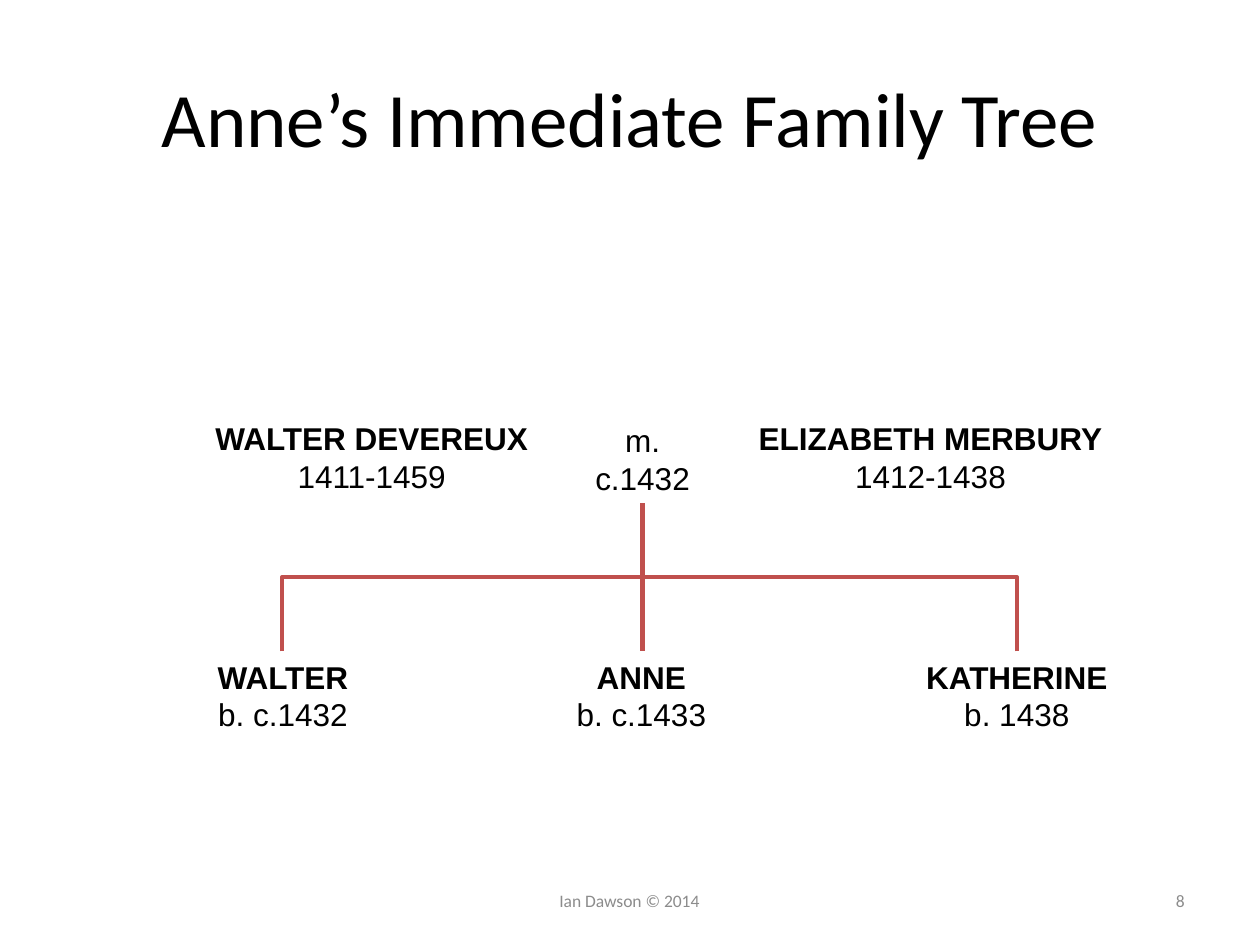
"""Build the slide showing Anne's immediate family tree."""
from dataclasses import dataclass

import pptx
import pptx.dml.color
import pptx.enum.shapes
import pptx.enum.text
import pptx.oxml
import pptx.oxml.ns
import pptx.shapes.connector
import pptx.slide
import pptx.text.text
import pptx.util

Inches = pptx.util.Inches
Align = pptx.enum.text.PP_ALIGN
Anchor = pptx.enum.text.MSO_ANCHOR
Connector = pptx.enum.shapes.MSO_CONNECTOR


@dataclass(frozen=True)
class Theme:
    """Fonts, colours and sizes of the slide."""
    heading_font: str = "Calibri"
    tree_font: str = "Arial"
    ink: str = "000000"
    footer_ink: str = "8C8C8C"
    branch: str = "C0504D"
    title_size: float = 44
    tree_size: float = 18
    footer_size: float = 10
    branch_width: float = 2.5


@dataclass(frozen=True)
class Entry:
    """Two centred lines of the tree."""
    heading: str
    dates: str
    left: float
    top: float
    width: float
    bold: bool = True


@dataclass(frozen=True)
class Footer:
    """A line of text at the foot of the slide."""
    text: str
    left: float
    width: float
    align: Align


THEME = Theme()
PARENT_TOP, CHILD_TOP, ENTRY_HEIGHT = 3.28, 5.17, 0.71
MARRIAGE_X, MARRIAGE_BOTTOM = 5.1, 3.99
SIBLING_Y = (MARRIAGE_BOTTOM + CHILD_TOP) / 2
WALTER_X, KATHERINE_X = 2.24, 8.07
FOOTER_TOP, FOOTER_HEIGHT = 6.95, 0.4

ENTRIES = [
    Entry("WALTER DEVEREUX", "1411-1459", 1.61, PARENT_TOP, 2.68),
    Entry("ELIZABETH MERBURY", "1412-1438", 5.91, PARENT_TOP, 2.95),
    Entry("m.", "c.1432", 4.62, PARENT_TOP + 0.01, 0.96, bold=False),
    Entry("KATHERINE", "b. 1438", 7.24, CHILD_TOP, 1.66),
    Entry("WALTER", "b. c.1432", 1.62, CHILD_TOP, 1.25),
    Entry("ANNE", "b. c.1433", 4.47, CHILD_TOP, 1.24),
]
FOOTERS = [
    Footer("Ian Dawson © 2014", 2.74, 4.51, Align.CENTER),
    Footer("8", 7.17, 2.33, Align.RIGHT),
]


def style(paragraph: pptx.text.text._Paragraph, font: str, size: float,
          color: str, align: Align, bold: bool = False) -> None:
    """Format a paragraph and its runs."""
    paragraph.alignment = align
    for run in paragraph.runs:
        run.font.name = font
        run.font.size = pptx.util.Pt(size)
        run.font.bold = bold
        run.font.color.rgb = pptx.dml.color.RGBColor.from_string(color)


def add_title(slide: pptx.slide.Slide, text: str) -> None:
    """Place and format the title."""
    title = slide.shapes.title
    title.left, title.top = Inches(0.12), Inches(0.3)
    title.width, title.height = Inches(9.76), Inches(1.25)
    title.text_frame.text = text
    title.text_frame.vertical_anchor = Anchor.MIDDLE
    style(title.text_frame.paragraphs[0], THEME.heading_font,
          THEME.title_size, THEME.ink, Align.CENTER)


def add_entry(slide: pptx.slide.Slide, entry: Entry) -> None:
    """Write one entry of the tree."""
    frame = slide.shapes.add_textbox(
        Inches(entry.left), Inches(entry.top),
        Inches(entry.width), Inches(ENTRY_HEIGHT)).text_frame
    frame.word_wrap = False
    frame.auto_size = pptx.enum.text.MSO_AUTO_SIZE.SHAPE_TO_FIT_TEXT
    frame.text = f"{entry.heading}\n{entry.dates}"
    for paragraph, bold in zip(frame.paragraphs, (entry.bold, False)):
        style(paragraph, THEME.tree_font, THEME.tree_size, THEME.ink,
              Align.CENTER, bold)


def add_footer(slide: pptx.slide.Slide, footer: Footer) -> None:
    """Write one footer text."""
    frame = slide.shapes.add_textbox(
        Inches(footer.left), Inches(FOOTER_TOP),
        Inches(footer.width), Inches(FOOTER_HEIGHT)).text_frame
    frame.word_wrap = True
    frame.vertical_anchor = Anchor.MIDDLE
    frame.text = footer.text
    style(frame.paragraphs[0], THEME.heading_font, THEME.footer_size,
          THEME.footer_ink, footer.align)


def add_line(slide: pptx.slide.Slide, kind: Connector, x1: float, y1: float,
             x2: float, y2: float) -> pptx.shapes.connector.Connector:
    """Draw a flat connector in the branch colour."""
    line = slide.shapes.add_connector(
        kind, Inches(x1), Inches(y1), Inches(x2), Inches(y2))
    line.line.color.rgb = pptx.dml.color.RGBColor.from_string(THEME.branch)
    line.line.width = pptx.util.Pt(THEME.branch_width)
    line._element.spPr.append(pptx.oxml.parse_xml(
        f"<a:effectLst {pptx.oxml.ns.nsdecls('a')}/>"))
    return line


def add_branch(slide: pptx.slide.Slide, child_x: float, end_y: float,
               preset: str) -> None:
    """Draw an elbow that leaves a child upwards and ends under the marriage."""
    side = 1 if child_x < MARRIAGE_X else -1
    center_x, center_y = (child_x + MARRIAGE_X) / 2, (CHILD_TOP + end_y) / 2
    half_rise = side * (CHILD_TOP - end_y) / 2
    half_span = abs(MARRIAGE_X - child_x) / 2
    elbow = add_line(slide, Connector.ELBOW,
                     center_x + half_rise, center_y + half_span,
                     center_x - half_rise, center_y - half_span)
    properties = elbow._element.spPr
    properties.find(pptx.oxml.ns.qn("a:prstGeom")).set("prst", preset)
    quarter_turn = 90 if side > 0 else 270
    properties.find(pptx.oxml.ns.qn("a:xfrm")).set(
        "rot", str(quarter_turn * 60000))


def main() -> None:
    """Build and save the slide."""
    deck = pptx.Presentation()
    deck.slide_width, deck.slide_height = Inches(10), Inches(7.5)
    slide = deck.slides.add_slide(deck.slide_layouts.get_by_name("Title Only"))
    add_title(slide, "Anne’s Immediate Family Tree")
    for footer in FOOTERS:
        add_footer(slide, footer)
    for entry in ENTRIES:
        add_entry(slide, entry)
    add_branch(slide, WALTER_X, MARRIAGE_BOTTOM, "bentConnector3")
    add_branch(slide, KATHERINE_X, SIBLING_Y, "bentConnector2")
    add_line(slide, Connector.STRAIGHT,
             MARRIAGE_X, SIBLING_Y, MARRIAGE_X, CHILD_TOP)
    deck.save("out.pptx")


if __name__ == "__main__":
    main()
